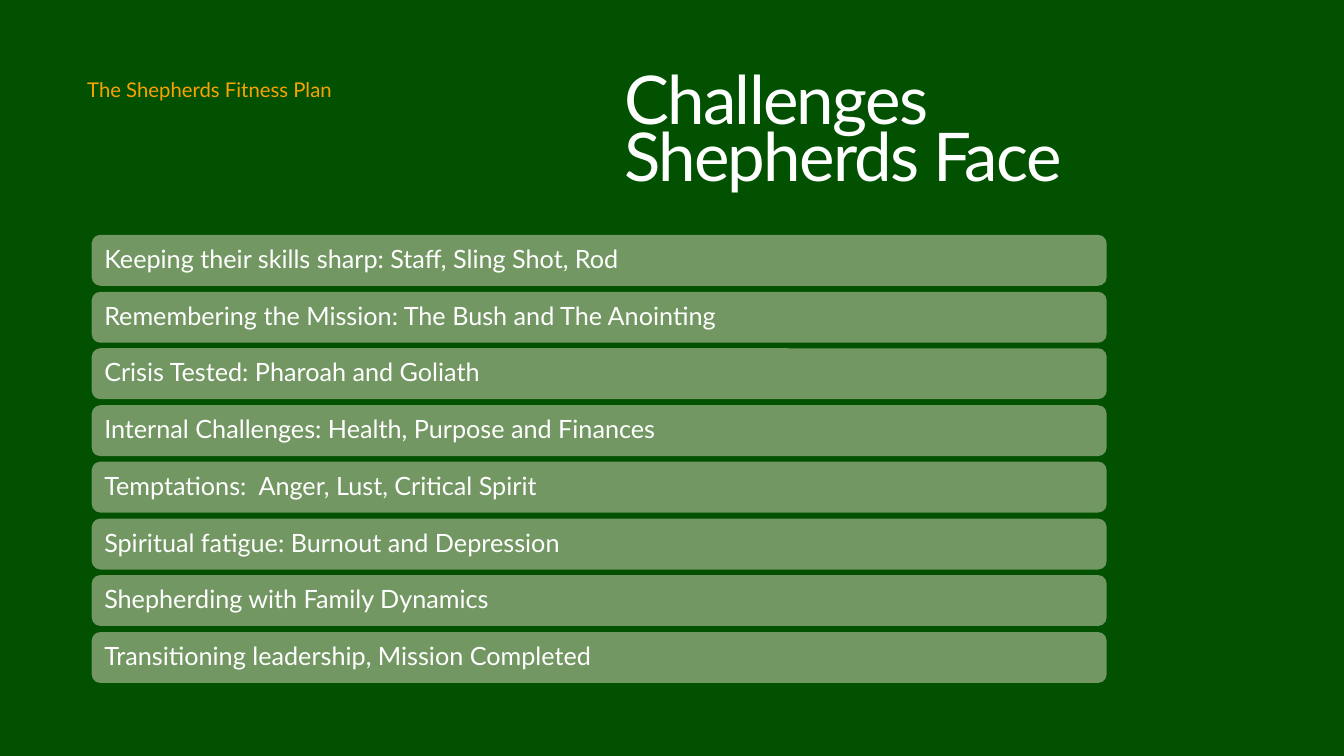
import pptx
import pptx.dml.color
import pptx.enum.shapes
import pptx.enum.text
import pptx.util

EMU_PER_PX = 9144  # 100 px to the inch
SLIDE_WIDTH, SLIDE_HEIGHT = 2667, 1500
FONT = "Lato"
COLORS = {
    "background": "015100",
    "bar": "729762",
    "text": "FFFFFF",
    "accent": "FAA200",
}
CHALLENGES = [
    "Keeping their skills sharp: Staff, Sling Shot, Rod",
    "Remembering the Mission: The Bush and The Anointing",
    "Crisis Tested: Pharoah and Goliath",
    "Internal Challenges: Health, Purpose and Finances",
    "Temptations:  Anger, Lust, Critical Spirit",
    "Spiritual fatigue: Burnout and Depression",
    "Shepherding with Family Dynamics",
    "Transitioning leadership, Mission Completed",
]
BAR_LEFT, BAR_WIDTH, BAR_HEIGHT = 182, 2014, 101
FIRST_BAR_TOP, LAST_BAR_TOP = 466, 1254


def px(length):
    return pptx.util.Emu(length * EMU_PER_PX)


def color(name):
    return pptx.dml.color.RGBColor.from_string(COLORS[name])


def apply_format(target, values):
    for name, value in values.items():
        setattr(target, name, value)


def write_text(shape, text, size, color_name, insets, anchor, line_spacing=1.0):
    """Fill a shape with one left-aligned run; insets are left, top, right, bottom."""
    frame = shape.text_frame
    left, top, right, bottom = map(px, insets)
    apply_format(frame, {
        "word_wrap": True,
        "auto_size": pptx.enum.text.MSO_AUTO_SIZE.NONE,
        "vertical_anchor": anchor,
        "margin_left": left,
        "margin_top": top,
        "margin_right": right,
        "margin_bottom": bottom,
    })
    paragraph = frame.paragraphs[0]
    apply_format(paragraph, {
        "alignment": pptx.enum.text.PP_ALIGN.LEFT,
        "line_spacing": line_spacing,
    })
    run = paragraph.add_run()
    run.text = text
    apply_format(run.font, {"name": FONT, "size": pptx.util.Pt(size)})
    run.font.color.rgb = color(color_name)
    return run


def add_title(slide, text):
    title = slide.shapes.title
    apply_format(title, {
        "left": px(1233), "top": px(144), "width": px(1131), "height": px(395),
    })
    run = write_text(title, text, 96, "text", (6, 14, 6, 6),
                     pptx.enum.text.MSO_ANCHOR.TOP, 0.7)
    run._r.get_or_add_rPr().set("spc", "-250")  # tight letter spacing


def add_plan_label(slide, text):
    label = slide.shapes.add_textbox(px(165), px(144), px(651), px(65))
    write_text(label, text, 29, "accent", (8, 8, 8, 8),
               pptx.enum.text.MSO_ANCHOR.MIDDLE)


def add_bar(group, top, text):
    bar = group.shapes.add_shape(
        pptx.enum.shapes.MSO_SHAPE.ROUNDED_RECTANGLE,
        px(BAR_LEFT), px(top), px(BAR_WIDTH), px(BAR_HEIGHT))
    bar.shadow.inherit = False
    bar.fill.solid()
    bar.fill.fore_color.rgb = color("bar")
    bar.line.fill.background()
    write_text(bar, text, 36, "text", (20, 20, 20, 20),
               pptx.enum.text.MSO_ANCHOR.MIDDLE, 0.9)


def add_challenge_list(slide, challenges):
    group = slide.shapes.add_group_shape()
    pitch = (LAST_BAR_TOP - FIRST_BAR_TOP) / (len(challenges) - 1)
    for index, text in enumerate(challenges):
        add_bar(group, FIRST_BAR_TOP + round(index * pitch), text)


def main():
    presentation = pptx.Presentation()
    presentation.slide_width = px(SLIDE_WIDTH)
    presentation.slide_height = px(SLIDE_HEIGHT)
    title_only = presentation.slide_layouts.get_by_name("Title Only")
    slide = presentation.slides.add_slide(title_only)

    # Background
    slide.background.fill.solid()
    slide.background.fill.fore_color.rgb = color("background")

    # Heading
    add_plan_label(slide, "The Shepherds Fitness Plan")
    add_title(slide, "Challenges Shepherds Face")

    # Stacked bars
    add_challenge_list(slide, CHALLENGES)

    presentation.save("out.pptx")


if __name__ == "__main__":
    main()
